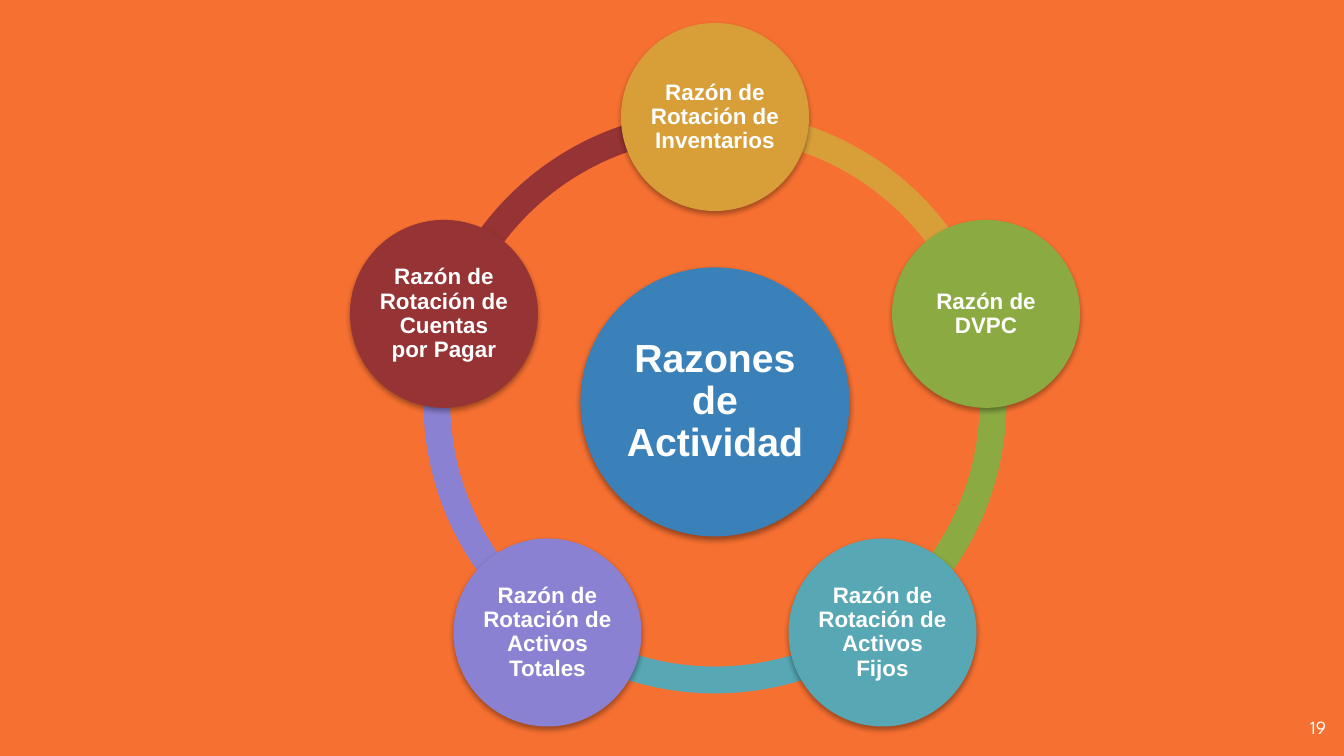
"""Build a slide with five activity ratios in a ring around a hub."""
import math

from lxml import etree
from pptx import Presentation, util as u
from pptx.dml.color import RGBColor
from pptx.enum import shapes, text
from pptx.oxml import ns

PX = 914400 / 134.4
WHITE = RGBColor(0xFF, 0xFF, 0xFF)
ORANGE = RGBColor(0xF6, 0x70, 0x31)
BLUE = RGBColor(0x3A, 0x81, 0xBA)
GOLD = RGBColor(0xD8, 0x9F, 0x39)
GREEN = RGBColor(0x8B, 0xAB, 0x42)
TEAL = RGBColor(0x57, 0xA7, 0xB5)
VIOLET = RGBColor(0x8B, 0x81, 0xD2)
RED = RGBColor(0x96, 0x33, 0x34)

MID_X, MID_Y = 715, 402
ORBIT, RING, HUB, NODE = 285, 583, 269, 188
NODES = [
    ("Razón de Rotación de Inventarios", GOLD),
    ("Razón de DVPC", GREEN),
    ("Razón de Rotación de Activos Fijos", TEAL),
    ("Razón de Rotación de Activos Totales", VIOLET),
    ("Razón de Rotación de Cuentas por Pagar", RED),
]
STEP = 360 / len(NODES)


def add_round(kind, x, y, size, color):
    left, top, side = (int(n * PX) for n in (x - size / 2, y - size / 2, size))
    shape = group.shapes.add_shape(kind, left, top, side, side)
    shape.shadow.inherit = False
    shape.fill.solid()
    shape.fill.fore_color.rgb = color
    shape.line.fill.background()
    return shape


def add_disc(x, y, size, color, words, points, inset, alpha):
    disc = add_round(shapes.MSO_SHAPE.OVAL, x, y, size, color)
    effects = disc._element.spPr.find(ns.qn("a:effectLst"))
    shade = etree.SubElement(effects, ns.qn("a:outerShdw"), blurRad="39400",
                             dist="22000", dir="5400000", rotWithShape="0")
    black = etree.SubElement(shade, ns.qn("a:srgbClr"), val="000000")
    etree.SubElement(black, ns.qn("a:alpha"), val=str(alpha * 1000))
    frame = disc.text_frame
    frame.word_wrap = True
    frame.vertical_anchor = text.MSO_ANCHOR.MIDDLE
    frame.margin_left = frame.margin_right = int(inset * PX)
    frame.margin_top = frame.margin_bottom = int(inset * PX)
    para = frame.paragraphs[0]
    para.text = words
    para.alignment = text.PP_ALIGN.CENTER
    para.line_spacing = 0.9
    para.font.name = "Arial"
    para.font.size = u.Pt(points)
    para.font.bold = True
    para.font.color.rgb = WHITE


deck = Presentation()
deck.slide_width, deck.slide_height = int(1344 * PX), int(756 * PX)
slide = deck.slides.add_slide(deck.slide_layouts[6])
slide.background.fill.solid()
slide.background.fill.fore_color.rgb = ORANGE

box = slide.shapes.add_textbox(*(int(n * PX) for n in (1258, 698, 81, 58)))
frame = box.text_frame
frame.word_wrap = True
frame.vertical_anchor = text.MSO_ANCHOR.MIDDLE
frame.margin_left = frame.margin_right = int(13 * PX)
frame.margin_top = frame.margin_bottom = int(13 * PX)
para = frame.paragraphs[0]
para.text = "19"
para.alignment = text.PP_ALIGN.RIGHT
para.font.name = "League Spartan"
para.font.size = u.Pt(10)
para.font.color.rgb = WHITE

group = slide.shapes.add_group_shape()
for i, (words, color) in reversed(list(enumerate(NODES))):
    arc = add_round(shapes.MSO_SHAPE.BLOCK_ARC, MID_X, MID_Y, RING, color)
    start = (270 + i * STEP) % 360
    arc.adjustments[0] = start * 0.6
    arc.adjustments[1] = (start + STEP) % 360 * 0.6
    arc.adjustments[2] = 0.046

add_disc(MID_X, MID_Y, HUB, BLUE, "Razones de Actividad", 21, 4, 38)
for i, (words, color) in enumerate(NODES):
    turn = math.radians(i * STEP)
    x = MID_X + ORBIT * math.sin(turn)
    y = MID_Y - ORBIT * math.cos(turn)
    add_disc(x, y, NODE, color, words, 12, 2, 35)

deck.save("out.pptx")
